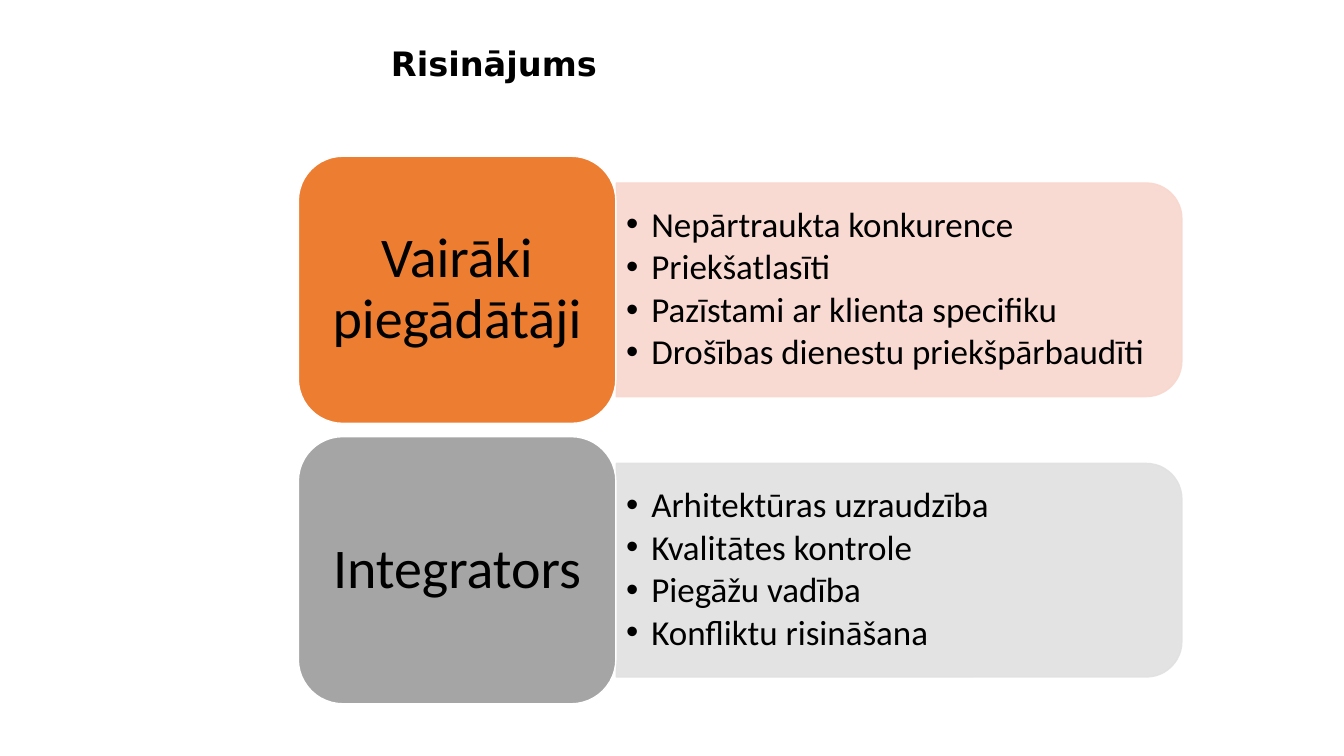
from lxml import etree
from pptx import Presentation
from pptx.dml.color import RGBColor
from pptx.enum.shapes import MSO_SHAPE
from pptx.enum.text import MSO_ANCHOR, PP_ALIGN
from pptx.oxml.ns import qn
from pptx.util import Pt

ROUND = MSO_SHAPE.ROUNDED_RECTANGLE
TAB = MSO_SHAPE.ROUND_2_SAME_RECTANGLE
TOP = MSO_ANCHOR.TOP
MIDDLE = MSO_ANCHOR.MIDDLE
LEFT = PP_ALIGN.LEFT
CENTER = PP_ALIGN.CENTER

BLACK = RGBColor(0, 0, 0)
WHITE = RGBColor(255, 255, 255)
ORANGE = RGBColor(0xED, 0x7D, 0x31)
PEACH = RGBColor(0xF8, 0xD7, 0xCE)
GREY = RGBColor(0xA5, 0xA5, 0xA5)
PALE = RGBColor(0xE1, 0xE1, 0xE1)

TILE_X, TILE_W, TILE_H = 213.1, 226.8, 190.8
PANEL_X, PANEL_W, PANEL_H = 440.2, 404, 152.6
LIST_W, LIST_H = 396, 137.5
FIRST_MID, STEP = 207, 200.3

ROWS = [
    ("Vairāki piegādātāji", ORANGE, PEACH,
     ["Nepārtraukta konkurence", "Priekšatlasīti",
      "Pazīstami ar klienta specifiku",
      "Drošības dienestu priekšpārbaudīti"]),
    ("Integrators", GREY, PALE,
     ["Arhitektūras uzraudzība", "Kvalitātes kontrole",
      "Piegāžu vadība", "Konfliktu risināšana"]),
]


def set_frame(shape, anchor, side, edge):
    frame = shape.text_frame
    frame.word_wrap = True
    frame.vertical_anchor = anchor
    frame.margin_left = frame.margin_right = Pt(side)
    frame.margin_top = frame.margin_bottom = Pt(edge)
    return frame


def style(para, text, face, size, align=LEFT, bold=False):
    para.text = text
    para.alignment = align
    para.line_spacing = 0.9
    font = para.font
    font.name = face
    font.size = Pt(size)
    font.bold = bold
    font.color.rgb = BLACK


def add_bullet(para):
    props = para._p.get_or_add_pPr()
    props.set("marL", str(Pt(18)))
    props.set("indent", str(-Pt(18)))
    etree.SubElement(props, qn("a:buFont")).set("typeface", "Arial")
    etree.SubElement(props, qn("a:buChar")).set("char", "•")


def add_block(slide, kind, x, y, w, h, fill, line):
    block = slide.shapes.add_shape(kind, Pt(x), Pt(y), Pt(w), Pt(h))
    block.shadow.inherit = False
    block.fill.solid()
    block.fill.fore_color.rgb = fill
    block.line.color.rgb = line
    block.line.width = Pt(1)
    return block


def add_title(slide, text):
    box = slide.shapes.add_textbox(Pt(272.2), Pt(30.2), Pt(640), Pt(81.4))
    frame = set_frame(box, TOP, 7.2, 3.6)
    style(frame.paragraphs[0], text, "DejaVu Sans", 24, bold=True)


def add_panel(slide, mid, color):
    shift = (PANEL_W - PANEL_H) / 2
    panel = add_block(slide, TAB, PANEL_X + shift, mid - PANEL_W / 2,
                      PANEL_H, PANEL_W, color, color)
    panel.rotation = 90
    for tint in panel._element.spPr.iter(qn("a:srgbClr")):
        etree.SubElement(tint, qn("a:alpha")).set("val", "90000")


def add_list(slide, mid, items):
    box = slide.shapes.add_textbox(Pt(PANEL_X), Pt(mid - LIST_H / 2),
                                   Pt(LIST_W), Pt(LIST_H))
    frame = set_frame(box, MIDDLE, 7.2, 3.6)
    for index, item in enumerate(items):
        para = frame.add_paragraph() if index else frame.paragraphs[0]
        add_bullet(para)
        style(para, item, "Calibri", 25)
        para.space_after = Pt(3.4)


def add_tile(slide, mid, label, color):
    tile = add_block(slide, ROUND, TILE_X, mid - TILE_H / 2,
                     TILE_W, TILE_H, color, WHITE)
    frame = set_frame(tile, MIDDLE, 12, 6)
    style(frame.paragraphs[0], label, "Calibri", 40, CENTER)


def main():
    deck = Presentation()
    deck.slide_width, deck.slide_height = Pt(960), Pt(540)
    slide = deck.slides.add_slide(deck.slide_layouts[6])
    add_title(slide, "Risinājums")
    for index, (label, strong, soft, items) in enumerate(ROWS):
        mid = FIRST_MID + index * STEP
        add_panel(slide, mid, soft)
        add_list(slide, mid, items)
        add_tile(slide, mid, label, strong)
    deck.save("out.pptx")


if __name__ == "__main__":
    main()
